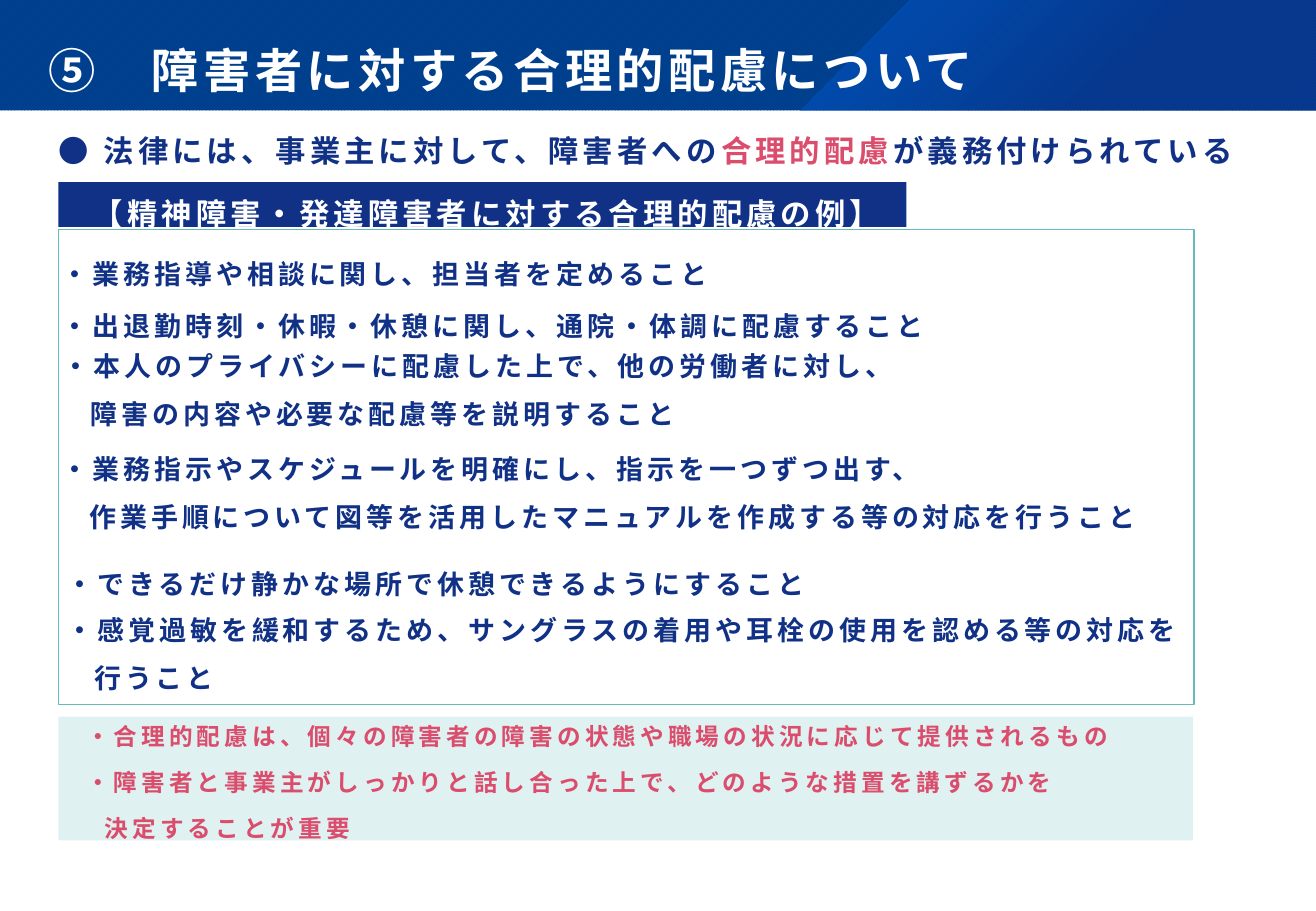
from pptx import Presentation
from pptx import util as u
from pptx.dml import color
from pptx.enum import dml, shapes, text
from pptx.oxml import parse_xml, ns

COLORS = {
    "navy": "103185",
    "rose": "DB4D6D",
    "white": "FFFFFF",
    "teal": "66BAB7",
    "mint": "E0F1F1",
    "stripe": "003579",
    "band": "004292",
    "glow": "0064DF",
    "deep": "0C338E",
}
BODY_FONT = "Noto Sans CJK JP"
TITLE_FONT = "Karla"

EXAMPLES = [
    (36.5, 152.7, ["・業務指導や相談に関し、担当者を定めること"]),
    (36.5, 183.5, ["・出退勤時刻・休暇・休憩に関し、通院・体調に配慮すること"]),
    (37.2, 207.2, ["・本人のプライバシーに配慮した上で、他の労働者に対し、",
                   "障害の内容や必要な配慮等を説明すること"]),
    (36.5, 268.2, ["・業務指示やスケジュールを明確にし、指示を一つずつ出す、",
                   "作業手順について図等を活用したマニュアルを作成する等の対応を行うこと"]),
    (39.4, 336.4, ["・できるだけ静かな場所で休憩できるようにすること"]),
    (39.4, 363.6, ["・感覚過敏を緩和するため、サングラスの着用や耳栓の使用を認める等の対応を",
                   "行うこと"]),
]
NOTES = [
    (16.4, "・合理的配慮は、個々の障害者の障害の状態や職場の状況に応じて提供されるもの"),
    (16.4, "・障害者と事業主がしっかりと話し合った上で、どのような措置を講ずるかを"),
    (27.4, "決定することが重要"),
]


def rgb(name):
    """Return the named colour."""
    return color.RGBColor.from_string(COLORS[name])


def points(box):
    """Turn a box in points into lengths."""
    return [u.Pt(value) for value in box]


def add_panel(page, box, fill=None, line=None):
    """Add a flat rectangle."""
    panel = page.shapes.add_shape(shapes.MSO_SHAPE.RECTANGLE, *points(box))
    panel.shadow.inherit = False
    if fill:
        panel.fill.solid()
        panel.fill.fore_color.rgb = rgb(fill)
    if line:
        panel.line.color.rgb = rgb(line)
        panel.line.width = u.Pt(1)
    else:
        panel.line.fill.background()
    return panel


def prepare_frame(shape, insets=(0, 0, 0, 0), anchor=text.MSO_ANCHOR.TOP):
    """Set wrapping, insets and anchor, and return the text frame."""
    frame = shape.text_frame
    frame.word_wrap = True
    frame.vertical_anchor = anchor
    (frame.margin_left, frame.margin_top,
     frame.margin_right, frame.margin_bottom) = points(insets)
    return frame


def write_lines(frame, lines, size, spacing, after=0, tracking=2.4, font=BODY_FONT):
    """Write (indent, [(words, colour)]) lines as paragraphs."""
    for index, (indent, spans) in enumerate(lines):
        para = frame.add_paragraph() if index else frame.paragraphs[0]
        para.alignment = text.PP_ALIGN.LEFT
        para.line_spacing = spacing
        para.space_after = u.Pt(after)
        properties = para._p.get_or_add_pPr()
        properties.set("marL", str(u.Pt(indent)))
        properties.set("indent", "0")
        for words, tint in spans:
            span = para.add_run()
            span.text = words
            span.font.size = u.Pt(size)
            span.font.bold = True
            span.font.name = font
            span.font.color.rgb = rgb(tint)
            span._r.rPr.set("spc", str(int(tracking * 100)))
            east_asian = parse_xml(f'<a:ea {ns.nsdecls("a")} typeface="{BODY_FONT}"/>')
            span._r.rPr.find(ns.qn("a:latin")).addnext(east_asian)


def add_sheen(page, box):
    """Add the slanted translucent gradient at the right of the header."""
    left, top, width, height = box
    outline = [(left + 65.5, top), (left + width, top),
               (left + width, top + height), (left, top + height)]
    corners = [points(corner) for corner in outline]
    builder = page.shapes.build_freeform(*corners[0], scale=1.0)
    builder.add_line_segments(corners[1:], close=True)
    sheen = builder.convert_to_shape()
    sheen.shadow.inherit = False
    sheen.line.fill.background()
    sheen.fill.background()
    stops = "".join(
        f'<a:gs pos="{place}000"><a:srgbClr val="{COLORS[tint]}">'
        f'<a:alpha val="{alpha}000"/></a:srgbClr></a:gs>'
        for place, tint, alpha in [(0, "glow", 50), (62, "deep", 55)])
    gradient = parse_xml(
        f'<a:gradFill {ns.nsdecls("a")} rotWithShape="1"><a:gsLst>{stops}</a:gsLst>'
        '<a:path path="circle"><a:fillToRect r="100000" b="100000"/></a:path></a:gradFill>')
    properties = sheen._element.spPr
    properties.replace(properties.find(ns.qn("a:noFill")), gradient)


def add_header(page, box):
    """Add the blue header band and its title."""
    left, top, width, height = box
    band = add_panel(page, box)
    band.fill.patterned()
    band.fill.pattern = dml.MSO_PATTERN.DARK_UPWARD_DIAGONAL
    band.fill.fore_color.rgb = rgb("stripe")
    band.fill.back_color.rgb = rgb("band")
    add_sheen(page, (left + 473.8, top, width - 473.8, height))
    title = page.shapes.add_textbox(*points(box))
    frame = prepare_frame(title, (28.8, 25.9, 25.9, 10.1), text.MSO_ANCHOR.BOTTOM)
    write_lines(frame, [(0, [("⑤\u3000障害者に対する合理的配慮について".replace("\u3000", "　"), "white")])],
                28, 0.9, tracking=2.7, font=TITLE_FONT)


def add_lead(page, box):
    """Add the lead sentence with its highlighted term."""
    frame = prepare_frame(page.shapes.add_textbox(*points(box)))
    spans = [("● 法律には、事業主に対して、障害者への", "navy"),
             ("合理的配慮", "rose"), ("が義務付けられている", "navy")]
    write_lines(frame, [(0, spans)], 18, u.Pt(20))


def add_examples(page, box):
    """Add the framed list of examples and its heading."""
    left, top, width, height = box
    add_panel(page, box, "white", "teal")
    heading = add_panel(page, (left, top - 28.1, 502.6, 26.6), "navy")
    words = "【精神障害・発達障害者に対する合理的配慮の例】"
    write_lines(prepare_frame(heading), [(20.4, [(words, "white")])], 18, u.Pt(29))
    for item_left, item_top, rows in EXAMPLES:
        item_box = (left + item_left - 34.6, top + item_top - 136.1, 700, 19.2 * len(rows) + 9.4)
        frame = prepare_frame(page.shapes.add_textbox(*points(item_box)))
        lines = [(16.4 if index else 0, [(row, "navy")]) for index, row in enumerate(rows)]
        write_lines(frame, lines, 16, u.Pt(19.2), after=9.4)


def add_notes(page, box):
    """Add the tinted closing panel."""
    frame = prepare_frame(add_panel(page, box, "mint"), (0, 1, 0, 0))
    lines = [(indent, [(words, "rose")]) for indent, words in NOTES]
    write_lines(frame, lines, 14, u.Pt(19.2), after=8)


def main():
    """Build the slide and save it."""
    deck = Presentation()
    deck.slide_width, deck.slide_height = u.Pt(780), u.Pt(540)
    page = deck.slides.add_slide(deck.slide_layouts[6])
    add_header(page, (0, 0, 780, 65.5))
    add_lead(page, (34.6, 79.7, 710, 20))
    add_examples(page, (34.6, 136.1, 673.2, 281.5))
    add_notes(page, (34.6, 424.8, 672.5, 73.4))
    deck.save("out.pptx")


if __name__ == "__main__":
    main()
